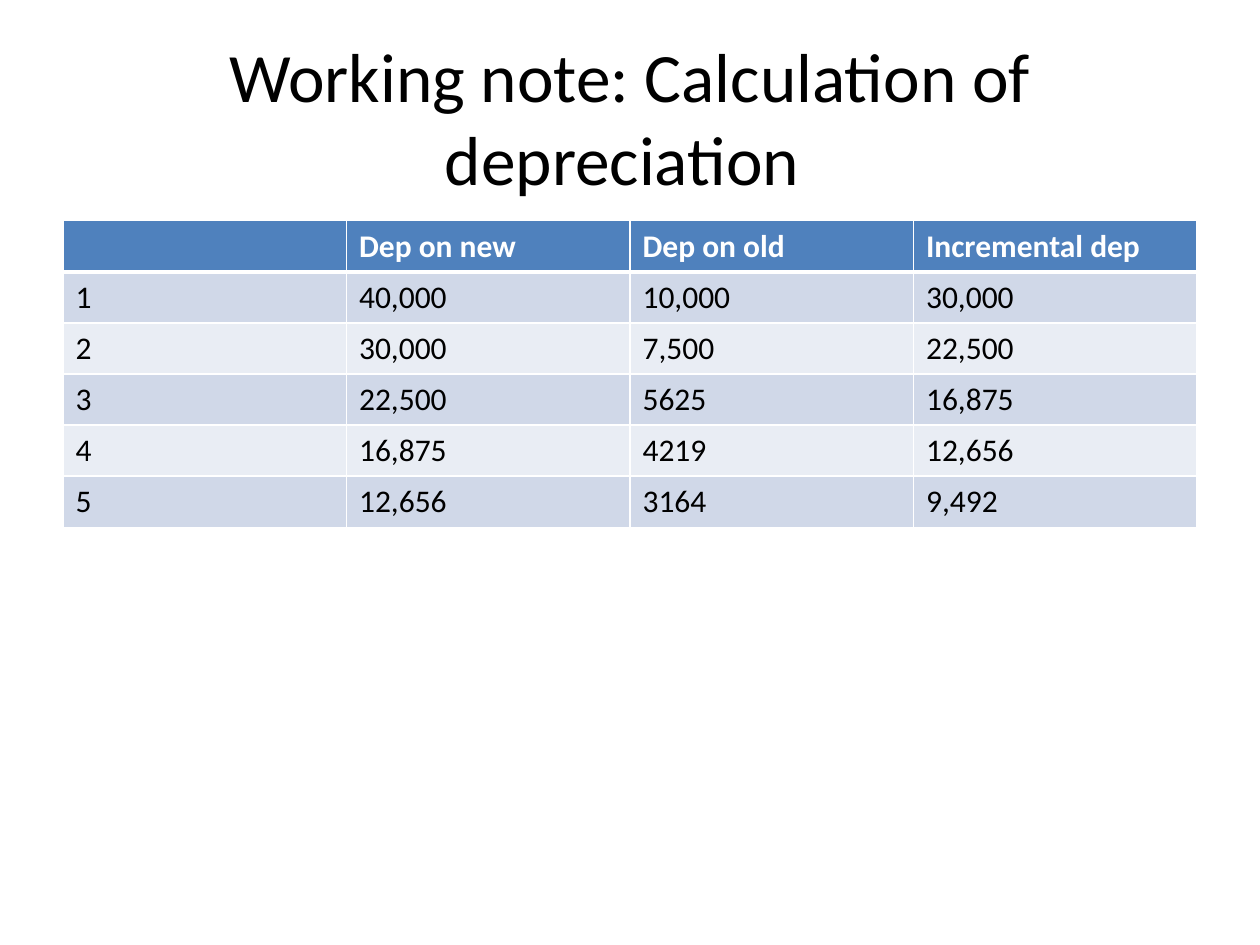
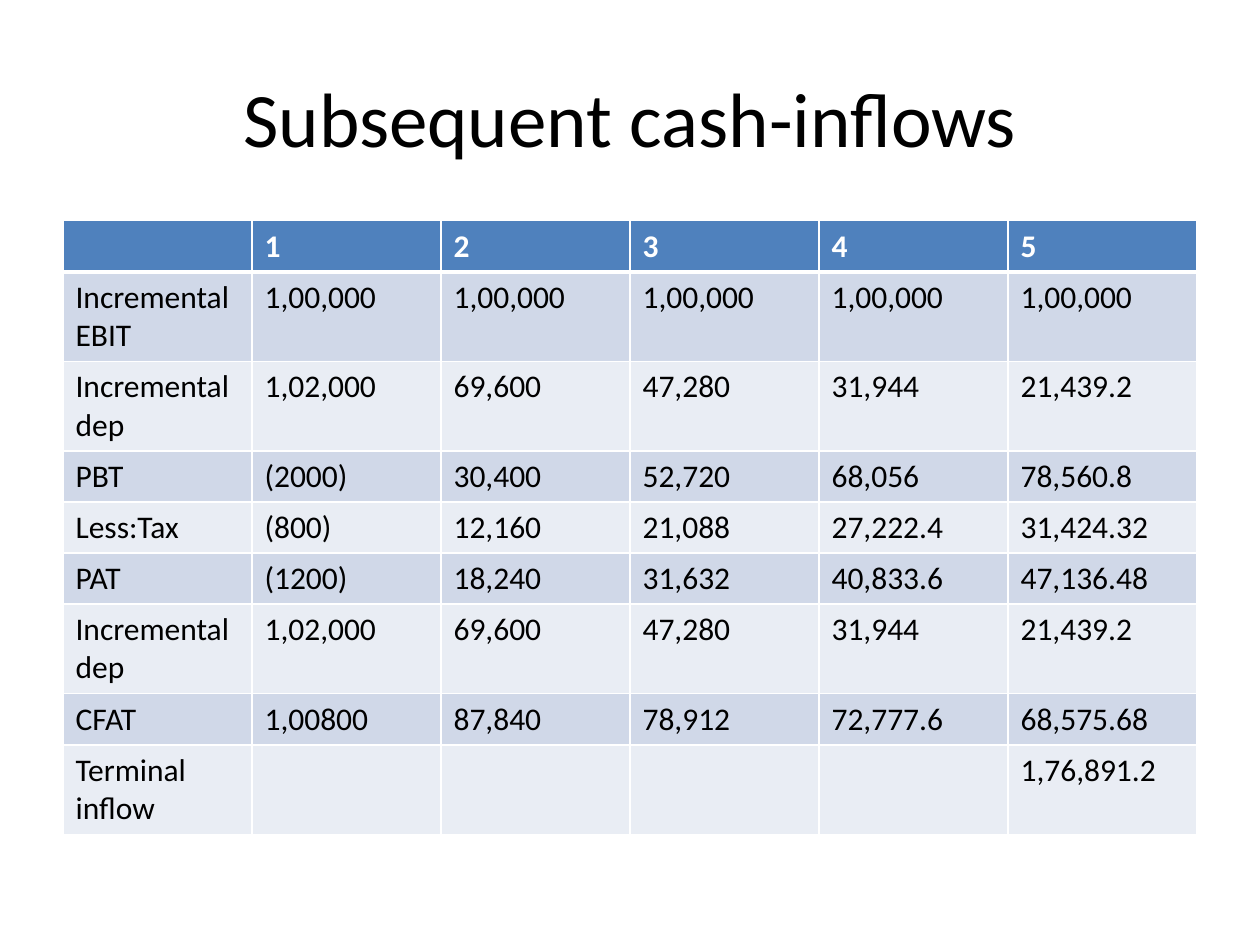
from lxml import etree
from pptx import Presentation
from pptx.dml.color import RGBColor
from pptx.enum.text import MSO_ANCHOR, PP_ALIGN
from pptx.oxml.ns import qn
from pptx.util import Cm, Pt

CENTER = PP_ALIGN.CENTER
MIDDLE = MSO_ANCHOR.MIDDLE
TITLE_ONLY = 5
COLORS = {
    "text": "000000",
    "header": "4F81BD",
    "header_text": "FFFFFF",
    "odd_row": "D0D8E8",
    "even_row": "E9EDF4",
    "border": "FFFFFF",
}


class SlideBuilder:
    font_name = "Calibri"
    left, width = Cm(1.27), Cm(22.86)
    title_top, title_height = Cm(0.76), Cm(3.18)
    table_top, row_height = Cm(4.45), Cm(1.03)

    def __init__(self, deck):
        self.deck = deck
        self.page = None

    def style(self, para, size, color, bold=False):
        font = para.font
        font.name, font.size, font.bold = self.font_name, Pt(size), bold
        font.color.rgb = RGBColor.from_string(COLORS[color])

    def add_page(self, title, size=44):
        self.page = self.deck.slides.add_slide(self.deck.slide_layouts[TITLE_ONLY])
        box = self.page.shapes.title
        box.left, box.top = self.left, self.title_top
        box.width, box.height = self.width, self.title_height
        frame = box.text_frame
        frame.text = title
        frame.vertical_anchor = MIDDLE
        para = frame.paragraphs[0]
        para.alignment = CENTER
        self.style(para, size, "text")

    def set_borders(self, cell, row):
        """Draw thin lines round the cell, with a thick one under the header row."""
        properties = cell._tc.get_or_add_tcPr()
        widths = {"L": 1, "R": 1, "T": 3 if row == 1 else 1, "B": 3 if row == 0 else 1}
        for side, width in widths.items():
            line = etree.SubElement(properties, qn(f"a:ln{side}"), w=str(Pt(width)))
            fill = etree.SubElement(line, qn("a:solidFill"))
            etree.SubElement(fill, qn("a:srgbClr"), val=COLORS["border"])

    def add_table(self, rows):
        columns = len(rows[0])
        table = self.page.shapes.add_table(
            len(rows), columns, self.left, self.table_top,
            self.width, self.row_height * len(rows)).table
        for column in table.columns:
            column.width = self.width // columns
        for row, values in enumerate(rows):
            is_header = row == 0
            fill = "header" if is_header else "odd_row" if row % 2 else "even_row"
            for column, value in enumerate(values):
                cell = table.cell(row, column)
                self.set_borders(cell, row)
                cell.fill.solid()
                cell.fill.fore_color.rgb = RGBColor.from_string(COLORS[fill])
                cell.text = value
                self.style(cell.text_frame.paragraphs[0], 18,
                           "header_text" if is_header else "text", is_header)


def main():
    deck = Presentation()
    deck.slide_width, deck.slide_height = Cm(25.4), Cm(19.05)
    builder = SlideBuilder(deck)

    builder.add_page("Working note: Calculation of depreciation ", 39.6)
    builder.add_table([
        ["", "Dep on new", "Dep on old", "Incremental dep"],
        ["1", "40,000", "10,000", "30,000"],
        ["2", "30,000", "7,500", "22,500"],
        ["3", "22,500", "5625", "16,875"],
        ["4", "16,875", "4219", "12,656"],
        ["5", "12,656", "3164", "9,492"],
    ])

    builder.add_page("Subsequent cash-inflows")
    incremental_dep = ["Incremental dep", "1,02,000", "69,600", "47,280", "31,944", "21,439.2"]
    builder.add_table([
        ["", "1", "2", "3", "4", "5"],
        ["Incremental EBIT"] + ["1,00,000"] * 5,
        incremental_dep,
        ["PBT", "(2000)", "30,400", "52,720", "68,056", "78,560.8"],
        ["Less:Tax", "(800)", "12,160", "21,088", "27,222.4", "31,424.32"],
        ["PAT", "(1200)", "18,240", "31,632", "40,833.6", "47,136.48"],
        incremental_dep,
        ["CFAT", "1,00800", "87,840", "78,912", "72,777.6", "68,575.68"],
        ["Terminal inflow", "", "", "", "", "1,76,891.2"],
    ])

    deck.save("out.pptx")


if __name__ == "__main__":
    main()
